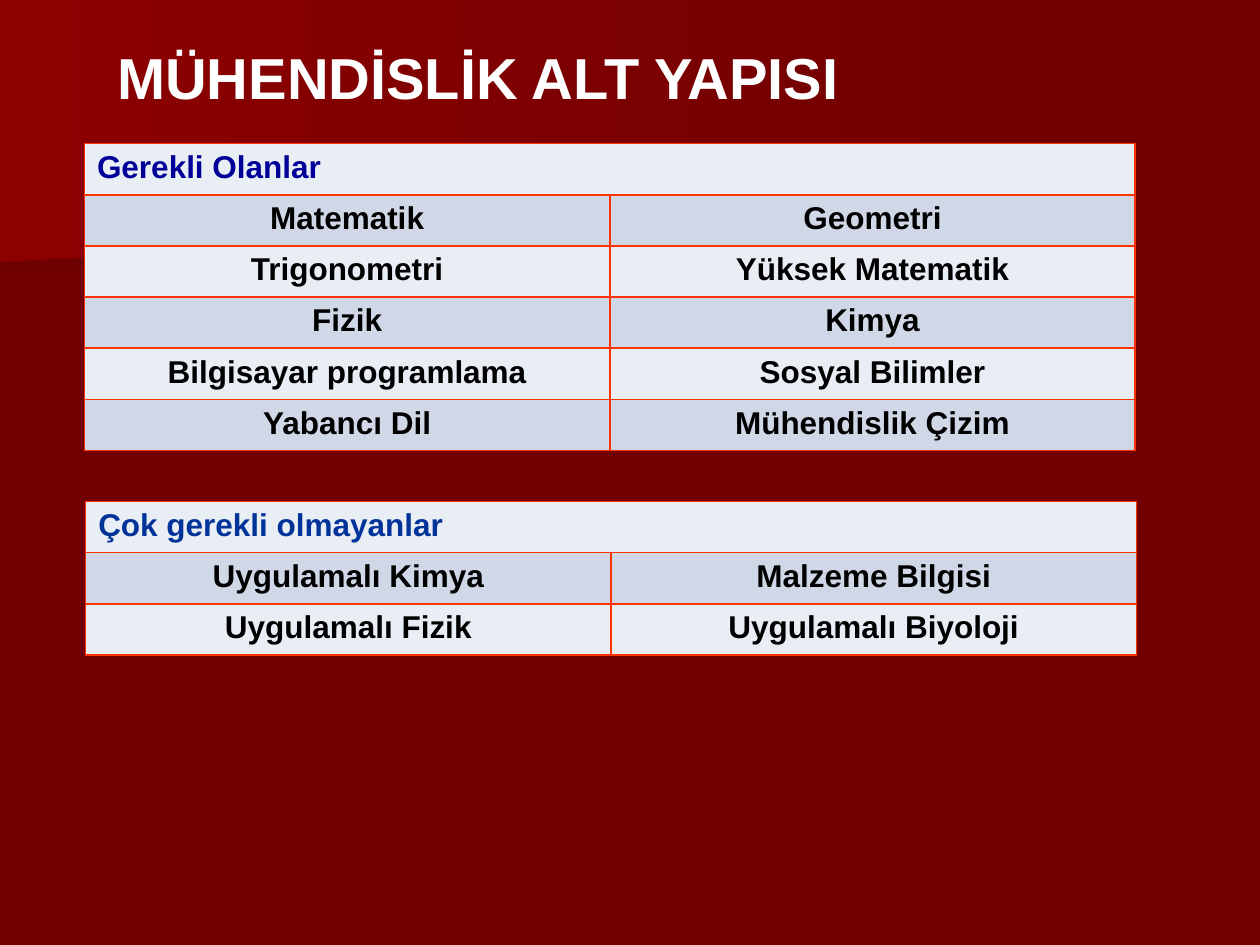
from dataclasses import dataclass

from lxml import etree
from pptx import Presentation
from pptx.dml.color import RGBColor
from pptx.enum import text
from pptx.oxml import ns
from pptx.util import Inches, Pt

COLORS = {
    "background": "720000",
    "lower_glow": "6F0000",
    "upper_glow": "8C0000",
    "title": "FFFFFF",
    "border": "FF3300",
    "light_row": "E9EDF4",
    "dark_row": "D0D8E8",
    "body": "000000",
    "required": "000099",
    "optional": "003399",
}
FONT = "Arial"
COLUMN_WIDTH = 4.17
ROW_HEIGHT = 0.406


@dataclass
class Band:
    points: list[tuple[float, float]]
    color: str


@dataclass
class CourseTable:
    left: float
    top: float
    heading: str
    heading_color: str
    courses: list[tuple[str, str]]


BANDS = [
    Band([(0, 1.01), (7.79, 1.01), (7.78, 1.53), (0, 2.17)], "lower_glow"),
    Band([(0, 0), (7.92, 0), (7.92, 1.62), (0, 2.08)], "upper_glow"),
]
TABLES = [
    CourseTable(0.67, 1.14, "Gerekli Olanlar", "required", [
        ("Matematik", "Geometri"),
        ("Trigonometri", "Yüksek Matematik"),
        ("Fizik", "Kimya"),
        ("Bilgisayar programlama", "Sosyal Bilimler"),
        ("Yabancı Dil", "Mühendislik Çizim"),
    ]),
    CourseTable(0.68, 3.98, "Çok gerekli olmayanlar", "optional", [
        ("Uygulamalı Kimya", "Malzeme Bilgisi"),
        ("Uygulamalı Fizik", "Uygulamalı Biyoloji"),
    ]),
]


def rgb(name: str) -> RGBColor:
    return RGBColor.from_string(COLORS[name])


def format_paragraph(paragraph, size: float, color: str, alignment) -> None:
    paragraph.alignment = alignment
    font = paragraph.font
    font.name, font.size, font.bold = FONT, Pt(size), True
    font.color.rgb = rgb(color)


def draw_band(slide, band: Band) -> None:
    corners = [(Inches(x), Inches(y)) for x, y in band.points]
    builder = slide.shapes.build_freeform(*corners[0])
    builder.add_line_segments(corners[1:], close=True)
    shape = builder.convert_to_shape()
    shape.shadow.inherit = False
    shape.line.fill.background()
    shape.fill.gradient()
    shape.fill.gradient_angle = 0
    for stop, color in zip(shape.fill.gradient_stops, (band.color, "background")):
        stop.color.rgb = rgb(color)
    # Stretch the two stops over the whole band
    first, last = shape.fill.gradient_stops
    first.position, last.position = 0, 1


def draw_title(slide, wording: str) -> None:
    title = slide.shapes.title
    title.left, title.top = Inches(0.8), Inches(0.28)
    title.width, title.height = Inches(5.99), Inches(0.66)
    frame = title.text_frame
    frame.text = wording
    frame.word_wrap = False
    frame.auto_size = text.MSO_AUTO_SIZE.SHAPE_TO_FIT_TEXT
    frame.vertical_anchor = text.MSO_ANCHOR.TOP
    format_paragraph(frame.paragraphs[0], 33, "title", text.PP_ALIGN.CENTER)
    # Bring the title in front of the background bands
    title.element.getparent().append(title.element)


def add_borders(cell) -> None:
    properties = cell._tc.get_or_add_tcPr()
    for side in ("a:lnL", "a:lnR", "a:lnT", "a:lnB"):
        line = etree.SubElement(properties, ns.qn(side), w=str(Pt(1)))
        fill = etree.SubElement(line, ns.qn("a:solidFill"))
        etree.SubElement(fill, ns.qn("a:srgbClr"), val=COLORS["border"])


def draw_table(slide, content: CourseTable) -> None:
    rows = [(content.heading, ""), *content.courses]
    table = slide.shapes.add_table(
        len(rows), 2, Inches(content.left), Inches(content.top),
        Inches(2 * COLUMN_WIDTH), Inches(ROW_HEIGHT * len(rows)),
    ).table
    table.cell(0, 0).merge(table.cell(0, 1))
    for row_index, row in enumerate(rows):
        heading = row_index == 0
        for column_index, wording in enumerate(row):
            cell = table.cell(row_index, column_index)
            add_borders(cell)
            cell.fill.solid()
            cell.fill.fore_color.rgb = rgb("dark_row" if row_index % 2 else "light_row")
            cell.text = wording
            format_paragraph(
                cell.text_frame.paragraphs[0], 18,
                content.heading_color if heading else "body",
                text.PP_ALIGN.LEFT if heading else text.PP_ALIGN.CENTER,
            )


def main() -> None:
    presentation = Presentation()
    presentation.slide_width, presentation.slide_height = Inches(10), Inches(7.5)
    slide = presentation.slides.add_slide(presentation.slide_layouts[5])

    # Background
    slide.background.fill.solid()
    slide.background.fill.fore_color.rgb = rgb("background")
    for band in BANDS:
        draw_band(slide, band)

    # Title and course tables
    draw_title(slide, "MÜHENDİSLİK ALT YAPISI")
    for content in TABLES:
        draw_table(slide, content)

    presentation.save("out.pptx")


if __name__ == "__main__":
    main()
